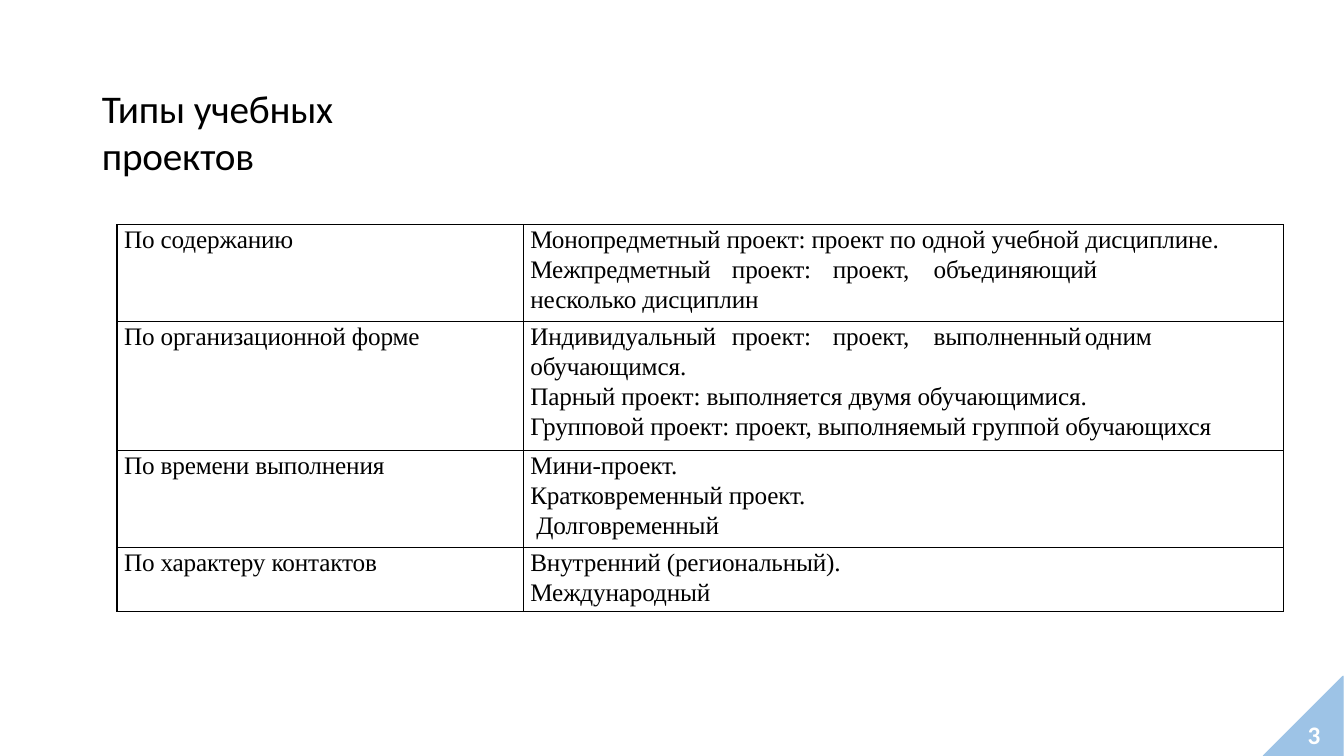
"""Build a slide with a table of the types of study projects."""
import pptx
import pptx.dml.color
import pptx.enum.text
import pptx.oxml
import pptx.oxml.ns
import pptx.util

Inches = pptx.util.Inches
Pt = pptx.util.Pt
SERIF = {"name": "Times New Roman", "size": Pt(18)}
EXACT = {"line_spacing": Pt(20.9)}
LOOSE = {"line_spacing": 1.07}
AFTER = {"space_before": Pt(1.6)}


def colour(value):
    return pptx.dml.color.RGBColor.from_string(value)


def write(para, text, font, layout, ink="000000", indent=0.07, spacing=-10, tabs=()):
    para.text = text
    for name, value in layout.items():
        setattr(para, name, value)
    properties = para._p.get_or_add_pPr()
    properties.set("marL", str(Inches(indent)))
    properties.set("indent", "0")
    if tabs:
        stops = pptx.oxml.parse_xml(f"<a:tabLst {pptx.oxml.ns.nsdecls('a')}/>")
        for stop in tabs:
            tab = stops.makeelement(pptx.oxml.ns.qn("a:tab"), {"pos": str(Inches(stop)), "algn": "l"})
            stops.append(tab)
        properties.append(stops)
    for span in para.runs:
        for name, value in font.items():
            setattr(span.font, name, value)
        span.font.color.rgb = colour(ink)
        span._r.get_or_add_rPr().set("spc", str(spacing))


deck = pptx.Presentation()
deck.slide_width, deck.slide_height = Inches(13.33), Inches(7.5)
page = deck.slides.add_slide(deck.slide_layouts[5])

right, bottom, side = Inches(13.32), Inches(7.5), Inches(0.79)
outline = page.shapes.build_freeform(right, bottom - side)
outline.add_line_segments([(right - side, bottom), (right, bottom)], close=True)
corner = outline.convert_to_shape()
corner.shadow.inherit = False
corner.fill.solid()
corner.fill.fore_color.rgb = colour("9DC3E6")
corner.line.color.rgb = colour("9DC3E6")
corner.line.width = Pt(0.96)

categories = [
    ("По содержанию", 0.96, [
        ("Монопредметный проект: проект по одной учебной дисциплине.", EXACT, ()),
        ("Межпредметный\tпроект:\tпроект,\tобъединяющий\vнесколько дисциплин", LOOSE, (2.21, 3.34, 4.43)),
    ]),
    ("По организационной форме", 1.28, [
        ("Индивидуальный\tпроект:\tпроект,\tвыполненный\tодним", EXACT, (2.39, 3.64, 4.86, 6.8)),
        ("обучающимся.", AFTER, ()),
        ("Парный проект: выполняется двумя обучающимися.", AFTER, ()),
        ("Групповой проект: проект, выполняемый группой обучающихся", AFTER, ()),
    ]),
    ("По времени выполнения", 0.96, [
        ("Мини-проект.", EXACT, ()),
        ("Кратковременный проект.\v Долговременный", LOOSE, ()),
    ]),
    ("По характеру контактов", 0.64, [
        ("Внутренний (региональный).", EXACT, ()),
        ("Международный", AFTER, ()),
    ]),
]
frame = page.shapes.add_table(len(categories), 2, Inches(1.16), Inches(2.23), Inches(11.57), Inches(3.84))
table = frame.table
table.first_row = table.horz_banding = False
for column, width in zip(table.columns, (4.03, 7.54)):
    column.width = Inches(width)
for row, (category, height, kinds) in zip(table.rows, categories):
    row.height = Inches(height)
    for cell, lines in zip(row.cells, ([(category, EXACT, ())], kinds)):
        cell.margin_left = cell.margin_top = cell.margin_right = cell.margin_bottom = 0
        for edge in ("lnL", "lnR", "lnT", "lnB"):
            cell._tc.get_or_add_tcPr().append(pptx.oxml.parse_xml(
                f"<a:{edge} {pptx.oxml.ns.nsdecls('a')} w=\"{Pt(1)}\"><a:solidFill>"
                f"<a:srgbClr val=\"000000\"/></a:solidFill></a:{edge}>"))
        cell.fill.background()
        for number, (text, layout, tabs) in enumerate(lines):
            para = cell.text_frame.add_paragraph() if number else cell.text_frame.paragraphs[0]
            write(para, text, SERIF, layout, tabs=tabs)

title = page.shapes.title
number_box = page.shapes.add_textbox(0, 0, 0, 0)
for box, place in ((title, (1, 0.83, 3.86, 0.49)), (number_box, (12.93, 7.18, 0.34, 0.28))):
    for name, value in zip(("left", "top", "width", "height"), place):
        setattr(box, name, Inches(value))
    settings = {"margin_left": 0, "margin_top": 0, "margin_right": 0, "margin_bottom": 0, "word_wrap": True,
                "auto_size": pptx.enum.text.MSO_AUTO_SIZE.NONE,
                "vertical_anchor": pptx.enum.text.MSO_ANCHOR.TOP}
    for name, value in settings.items():
        setattr(box.text_frame, name, value)
title.text_frame.margin_top = Inches(0.01)
write(title.text_frame.paragraphs[0], "Типы учебных проектов", {"name": "Calibri", "size": Pt(28)},
      {"space_before": Pt(0.9), "alignment": pptx.enum.text.PP_ALIGN.LEFT}, indent=0.01)
write(number_box.text_frame.paragraphs[0], "3", {"name": "Calibri", "size": Pt(18), "bold": True},
      {"line_spacing": Pt(18.1)}, ink="FFFFFF", indent=0.04, spacing=0)

deck.save("out.pptx")
